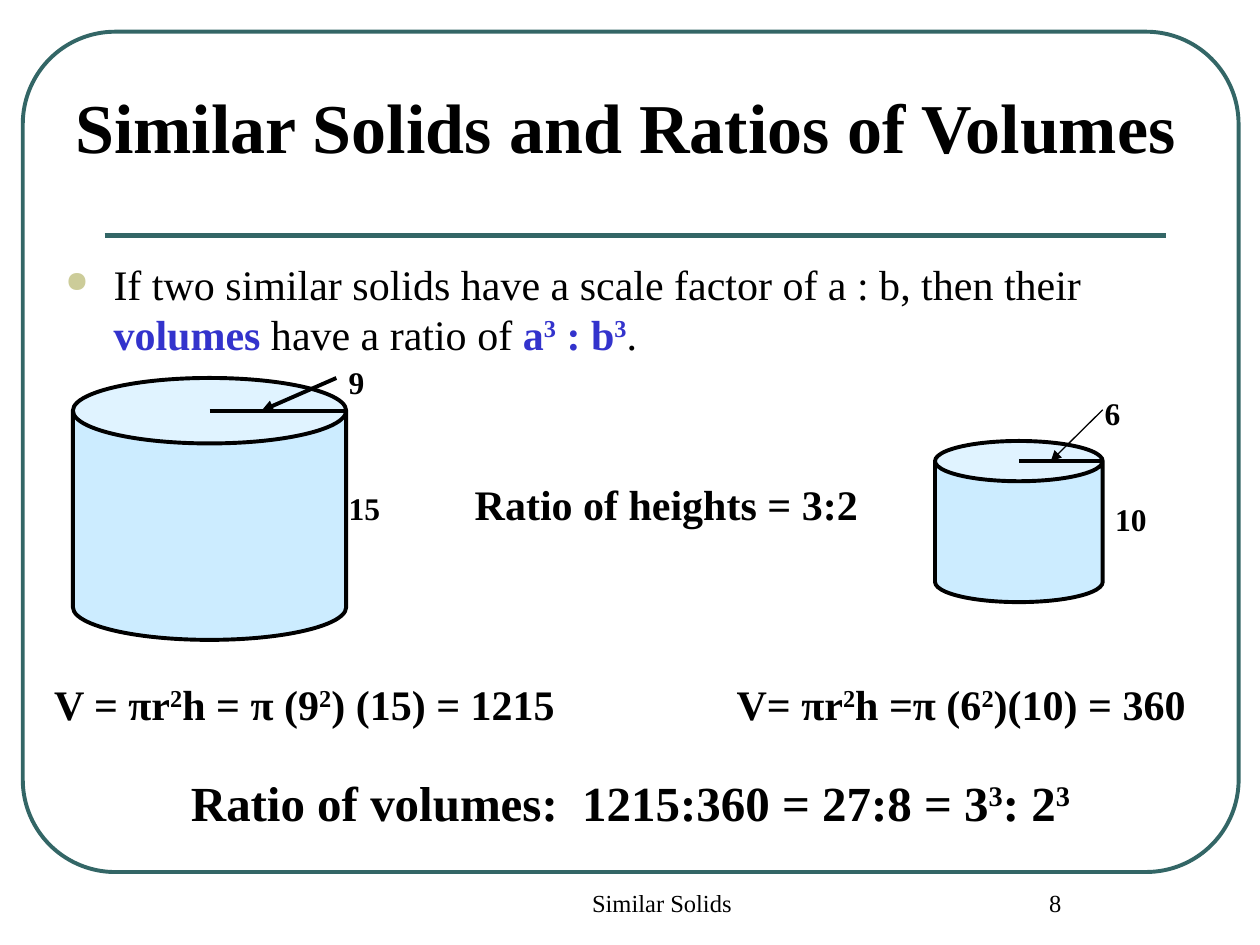
from lxml import etree
from pptx import Presentation
from pptx import util as u
from pptx.dml.color import RGBColor
from pptx.enum import shapes, text
from pptx.oxml.ns import qn

BLACK = RGBColor(0x00, 0x00, 0x00)
TEAL = RGBColor(0x33, 0x66, 0x66)
SKY = RGBColor(0xCC, 0xEC, 0xFF)
BLUE = RGBColor(0x33, 0x33, 0xCC)
KHAKI = RGBColor(0xCC, 0xCC, 0x99)
FONT = "Times New Roman"
LEFT, MID = text.PP_ALIGN.LEFT, text.PP_ALIGN.CENTER
TOP, LOW = text.MSO_ANCHOR.TOP, text.MSO_ANCHOR.BOTTOM


def add_run(para, words, size, bold, color, raised=False):
    run = para.add_run()
    run.text = words
    font = run.font
    font.name, font.size, font.bold = FONT, u.Pt(size), bold
    font.color.rgb = color
    if raised:
        run._r.get_or_add_rPr().set("baseline", "30000")


def write(slide, box, parts, size=24, bold=True, align=LEFT, anchor=TOP):
    """Place text; "^" raises the next character, (words,) marks a key term."""
    frame = slide.shapes.add_textbox(*map(u.Cm, box)).text_frame
    frame.word_wrap = True
    frame.vertical_anchor = anchor
    para = frame.paragraphs[0]
    para.alignment = align
    for part in [parts] if isinstance(parts, str) else parts:
        key = isinstance(part, tuple)
        style = (size, bold or key, BLUE if key else BLACK)
        first, *rest = (part[0] if key else part).split("^")
        add_run(para, first, *style)
        for piece in rest:
            add_run(para, piece[0], *style, raised=True)
            if piece[1:]:
                add_run(para, piece[1:], *style)
    return para


def add_bullet(para, indent):
    props = para._p.get_or_add_pPr()
    props.set("marL", str(u.Cm(indent)))
    props.set("indent", str(-u.Cm(indent)))
    tint = etree.SubElement(props, qn("a:buClr"))
    etree.SubElement(tint, qn("a:srgbClr"), val=str(KHAKI))
    etree.SubElement(props, qn("a:buSzPct"), val="70000")
    etree.SubElement(props, qn("a:buChar"), char="●")


def add_line(slide, start, end, width=2.25, color=BLACK, arrow=False):
    line = slide.shapes.add_connector(
        shapes.MSO_CONNECTOR.STRAIGHT, *map(u.Cm, (*start, *end)))
    line.line.color.rgb = color
    line.line.width = u.Pt(width)
    if arrow:
        etree.SubElement(line.line._get_or_add_ln(), qn("a:tailEnd"), type="triangle")
    etree.SubElement(line._element.spPr, qn("a:effectLst"))


def add_solid(slide, kind, box, color, fill=None):
    solid = slide.shapes.add_shape(kind, *map(u.Cm, box))
    solid.shadow.inherit = False
    if fill is None:
        solid.fill.background()
    else:
        solid.fill.solid()
        solid.fill.fore_color.rgb = fill
    solid.line.color.rgb = color
    solid.line.width = u.Pt(2.25)
    return solid


def draw_frame(slide, box):
    x, y, w, h = box
    # Rounded border and title rule
    border = add_solid(slide, shapes.MSO_SHAPE.ROUNDED_RECTANGLE, box, TEAL)
    border.adjustments[0] = 0.11
    add_line(slide, (x + 1.65, y + 4.11), (x + 23.04, y + 4.11), 3, TEAL)
    # Footer and slide number
    foot = y + h + 0.2
    write(slide, (x + 8.86, foot, 8.05, 1.27), "Similar Solids",
          size=14, bold=False, align=MID)
    write(slide, (x + 18.59, foot, 4.45, 1.27), "8",
          size=14, bold=False, align=MID)


def draw_intro(slide, box):
    x, y, w, h = box
    write(slide, (x + 0.2, y, w, 2.67), "Similar Solids and Ratios of Volumes",
          size=40, anchor=LOW)
    rule = write(slide, (x, y + 4.24, w, h - 4.24), [
        "If two similar solids have a scale factor of a : b, then their ",
        ("volumes",), " have a ratio of ", ("a^3 : b^3",), "."], bold=False)
    add_bullet(rule, 0.97)


def draw_can(slide, box, start, weight, labels):
    """Draw a cylinder; start and label places are offsets from its top right."""
    x, y, w, h = box
    right, rim = x + w, y + h / 8
    add_solid(slide, shapes.MSO_SHAPE.CAN, box, BLACK, SKY)
    # Radius and its pointer
    add_line(slide, (x + w / 2, rim), (right, rim))
    add_line(slide, (right + start[0], y + start[1]), (x + 0.69 * w, rim),
             weight, arrow=True)
    # Measures
    for words, dx, dy in labels:
        write(slide, (right + dx, y + dy, 1.5, 1.02), words, size=18)


def draw_sums(slide, box):
    x, y, w, h = box
    write(slide, (x + 8.48, y, 8.46, 1.27), "Ratio of heights = 3:2")
    write(slide, (x, y + 4.02, 10.8, 1.27), "V = πr^2h = π (9^2) (15) = 1215")
    write(slide, (x + 13.76, y + 4.02, 9.73, 1.27), "V= πr^2h =π (6^2)(10) = 360")
    write(slide, (x + 2.76, y + 5.92, 19.15, 1.45),
          "Ratio of volumes:  1215:360 = 27:8 = 3^3: 2^3", size=28)


def main():
    deck = Presentation()
    deck.slide_width, deck.slide_height = u.Cm(25.4), u.Cm(19.05)
    slide = deck.slides.add_slide(deck.slide_layouts[6])
    draw_frame(slide, (0.46, 0.64, 24.51, 16.94))
    draw_intro(slide, (1.07, 0.84, 22.86, 6.5))
    draw_can(slide, (1.47, 7.62, 5.51, 5.28), (-0.2, 0), 2.25,
             [("9", -0.2, -0.43), ("15", -0.2, 2.11)])
    draw_can(slide, (18.85, 8.89, 3.38, 3.25), (0, -0.63), 0.75,
             [("6", -0.21, -1.07), ("10", 0, 1.07)])
    draw_sums(slide, (0.84, 9.53, 23.49, 7.37))
    deck.save("out.pptx")


if __name__ == "__main__":
    main()
